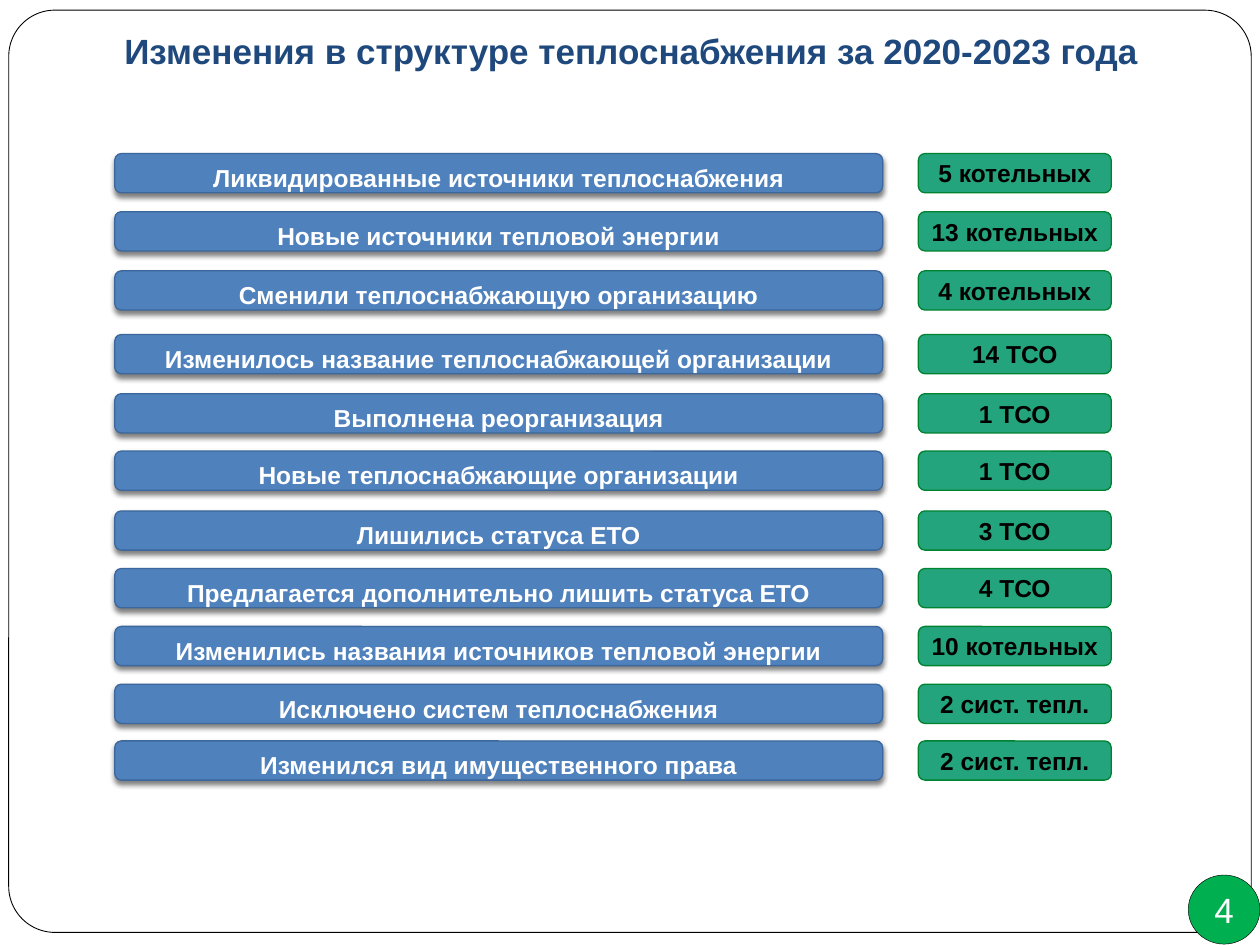
import dataclasses

import pptx
import pptx.dml.color
import pptx.enum.shapes
import pptx.enum.text
import pptx.oxml
import pptx.util

Pt = pptx.util.Pt
RGB = pptx.dml.color.RGBColor.from_string
SHAPES = pptx.enum.shapes.MSO_SHAPE
ANCHOR = pptx.enum.text.MSO_ANCHOR


@dataclasses.dataclass(frozen=True)
class Theme:
    font: str = "Arial"
    title_size: int = 20
    label_size: int = 14
    navy: str = "1F497D"
    blue: str = "4F81BD"
    blue_line: str = "3B679C"
    green: str = "24A47C"
    green_line: str = "008330"
    page_green: str = "00B050"
    white: str = "FFFFFF"
    black: str = "000000"


theme = Theme()

SHADOW = (
    '<a:effectLst xmlns:a="http://schemas.openxmlformats.org/drawingml/2006/main">'
    '<a:outerShdw blurRad="38100" dist="25400" dir="5400000" rotWithShape="0">'
    '<a:srgbClr val="000000"><a:alpha val="50000"/></a:srgbClr>'
    "</a:outerShdw></a:effectLst>"
)


def add_box(kind, left, top, width, height, fill, line, line_width):
    shape = slide.shapes.add_shape(kind, Pt(left), Pt(top), Pt(width), Pt(height))
    shape.shadow.inherit = False
    shape.fill.solid()
    shape.fill.fore_color.rgb = RGB(fill)
    shape.line.color.rgb = RGB(line)
    shape.line.width = Pt(line_width)
    return shape


def write(shape, text, size, color, bold=True, inset=None, anchor=ANCHOR.MIDDLE):
    """Put one centred line of text in the shape and return its paragraph."""
    frame = shape.text_frame
    frame.word_wrap = True
    frame.auto_size = pptx.enum.text.MSO_AUTO_SIZE.NONE
    frame.vertical_anchor = anchor
    if inset is not None:
        frame.margin_left = frame.margin_right = Pt(inset)
        frame.margin_top = frame.margin_bottom = Pt(inset)
    paragraph = frame.paragraphs[0]
    paragraph.alignment = pptx.enum.text.PP_ALIGN.CENTER
    run = paragraph.add_run()
    run.text = text
    run.font.name = theme.font
    run.font.size = Pt(size)
    run.font.bold = bold
    run.font.color.rgb = RGB(color)
    return paragraph


presentation = pptx.Presentation()
presentation.slide_width = Pt(720)
presentation.slide_height = Pt(540)
slide = presentation.slides.add_slide(presentation.slide_layouts[5])

# Title over the rounded page frame
title = slide.shapes.title
title.left, title.top, title.width, title.height = Pt(27.4), Pt(16.6), Pt(666.7), Pt(26.6)
write(title, "Изменения в структуре теплоснабжения за 2020-2023 года",
      theme.title_size, theme.navy, inset=0, anchor=ANCHOR.TOP)

page_frame = add_box(SHAPES.ROUNDED_RECTANGLE, 5, 5.8, 710, 527,
                     theme.white, theme.black, 0.5)
page_frame.adjustments[0] = 0.05
title.element.addprevious(page_frame.element)

# Each change with its top edge and count
changes = [
    (87.8, "Ликвидированные источники теплоснабжения", "5 котельных"),
    (121, "Новые источники тепловой энергии", "13 котельных"),
    (154.8, "Сменили теплоснабжающую организацию", "4 котельных"),
    (191.2, "Изменилось название теплоснабжающей организации", "14 ТСО"),
    (225, "Выполнена реорганизация", "1 ТСО"),
    (257.8, "Новые теплоснабжающие организации", "1 ТСО"),
    (292, "Лишились статуса ЕТО", "3 ТСО"),
    (324.9, "Предлагается дополнительно лишить статуса ЕТО", "4 ТСО"),
    (358, "Изменились названия источников тепловой энергии", "10 котельных"),
    (391, "Исключено систем теплоснабжения", "2 сист. тепл."),
    (423.4, "Изменился вид имущественного права", "2 сист. тепл."),
]
row_height = 22.4

for top, label, count in changes:
    bar = add_box(SHAPES.ROUNDED_RECTANGLE, 65.6, top, 438.8, row_height,
                  theme.blue, theme.blue_line, 0.75)
    properties = bar.element.spPr
    properties.remove(properties[-1])
    properties.append(pptx.oxml.parse_xml(SHADOW))
    paragraph = write(bar, label, theme.label_size, theme.white)
    paragraph.line_spacing = 1.3

    badge = add_box(SHAPES.ROUNDED_RECTANGLE, 524.8, top, 110.2, row_height,
                    theme.green, theme.green_line, 0.75)
    write(badge, count, theme.label_size, theme.black, inset=3)

# Page number
page_number = add_box(SHAPES.OVAL, 679, 500, 41, 39.5,
                      theme.page_green, theme.black, 0.25)
write(page_number, "4", theme.title_size, theme.white, bold=False, inset=0)

presentation.save("out.pptx")
